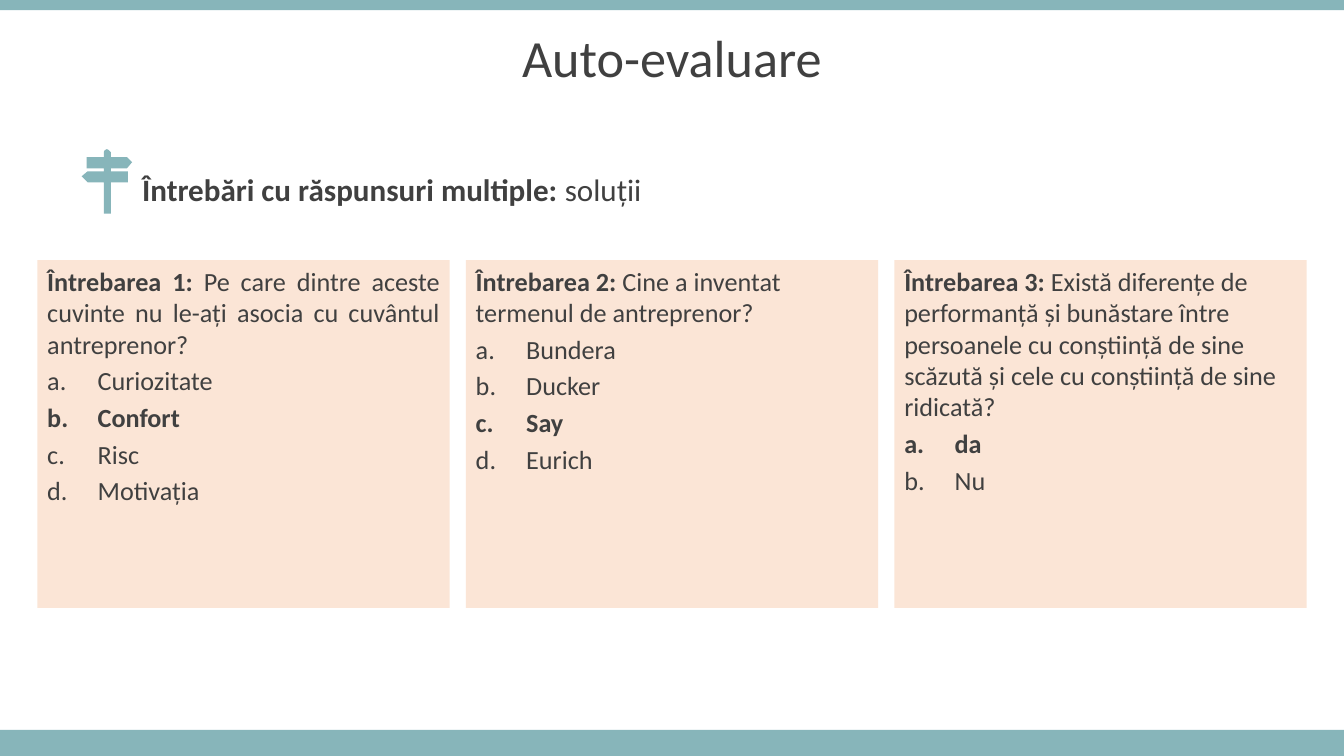
import pptx
import pptx.util
import pptx.dml.color
import pptx.enum.shapes
import pptx.enum.text
import pptx.oxml.ns
import lxml.etree

PX = 9144
THEME = {
    "font": "Calibri",
    "ink": "404040",
    "teal": "87B5BA",
    "peach": "FBE5D6",
    "title": 37.3,
    "lead": 22.2,
    "text": 18.7,
}
ALIGN = pptx.enum.text.PP_ALIGN
MIDDLE = pptx.enum.text.MSO_ANCHOR.MIDDLE
RECT = pptx.enum.shapes.MSO_SHAPE.RECTANGLE


def paint(shape, color):
    shape.shadow.inherit = False
    shape.fill.solid()
    shape.fill.fore_color.rgb = pptx.dml.color.RGBColor.from_string(THEME[color])
    shape.line.fill.background()


def write(par, parts, size, before, mark="buNone", indent=0):
    par.space_before = pptx.util.Pt(before)
    props = par._p.get_or_add_pPr()
    props.set("marL", str(indent * PX))
    props.set("indent", str(-indent * PX))
    bullet = lxml.etree.SubElement(props, pptx.oxml.ns.qn("a:" + mark))
    if mark == "buAutoNum":
        bullet.set("type", "alphaLcPeriod")
    for words, bold in parts:
        run = par.add_run()
        run.text = words
        run.font.name = THEME["font"]
        run.font.size = pptx.util.Pt(THEME[size])
        run.font.bold = bold
        run.font.color.rgb = pptx.dml.color.RGBColor.from_string(THEME["ink"])


deck = pptx.Presentation()
deck.slide_width = 1333 * PX
deck.slide_height = 750 * PX
slide = deck.slides.add_slide(deck.slide_layouts[1])
shapes = slide.shapes

for top, height in [(724, 26), (0, 10)]:
    band = shapes.add_shape(RECT, 0, top * PX, 1333 * PX, height * PX)
    paint(band, "teal")

heads = [
    (shapes.title, (0, 18, 1333, 84), "title", ALIGN.CENTER, 0.9,
     [("Auto-evaluare", False)]),
    (slide.placeholders[1], (131, 171, 892, 41), "lead", ALIGN.LEFT, 0.8,
     [("Întrebări cu răspunsuri multiple: ", True), ("soluții", False)]),
]
for holder, place, size, align, pitch, parts in heads:
    holder.left, holder.top, holder.width, holder.height = [n * PX for n in place]
    frame = holder.text_frame
    frame.auto_size = pptx.enum.text.MSO_AUTO_SIZE.NONE
    frame.vertical_anchor = MIDDLE
    par = frame.paragraphs[0]
    par.alignment = align
    par.line_spacing = pitch
    write(par, parts, size, 10)

post = shapes.build_freeform(106, 148, scale=PX)
post.add_line_segments([
    (108, 149), (110, 151), (110, 156), (126, 156), (131, 161), (126, 167),
    (110, 167), (110, 170), (127, 170), (127, 181), (110, 181), (110, 212),
    (103, 212), (103, 181), (87, 181), (81, 175), (87, 170), (103, 170),
    (103, 167), (86, 167), (86, 156), (103, 156), (103, 151), (104, 149),
])
paint(post.convert_to_shape(), "teal")

cards = [
    ("Întrebarea 1: ",
     "Pe care dintre aceste cuvinte nu le-ați asocia cu cuvântul antreprenor?",
     ["Curiozitate", "Confort", "Risc", "Motivația"], "Confort", ALIGN.JUSTIFY),
    ("Întrebarea 2: ", "Cine a inventat termenul de antreprenor?",
     ["Bundera", "Ducker", "Say", "Eurich"], "Say", ALIGN.LEFT),
    ("Întrebarea 3: ",
     "Există diferențe de performanță și bunăstare între persoanele cu "
     "conștiință de sine scăzută și cele cu conștiință de sine ridicată?",
     ["da", "Nu"], "da", ALIGN.LEFT),
]
for col, (label, query, answers, right, align) in enumerate(cards):
    card = shapes.add_shape(RECT, (37 + 425 * col) * PX, 258 * PX, 409 * PX, 345 * PX)
    paint(card, "peach")
    frame = card.text_frame
    frame.word_wrap = True
    frame.vertical_anchor = pptx.enum.text.MSO_ANCHOR.TOP
    par = frame.paragraphs[0]
    par.alignment = align
    write(par, [(label, True), (query, False)], "text", 3.74)
    for answer in answers:
        par = frame.add_paragraph()
        par.alignment = ALIGN.LEFT
        write(par, [(answer, answer == right)], "text", 3.74, "buAutoNum", 50)

deck.save("out.pptx")
